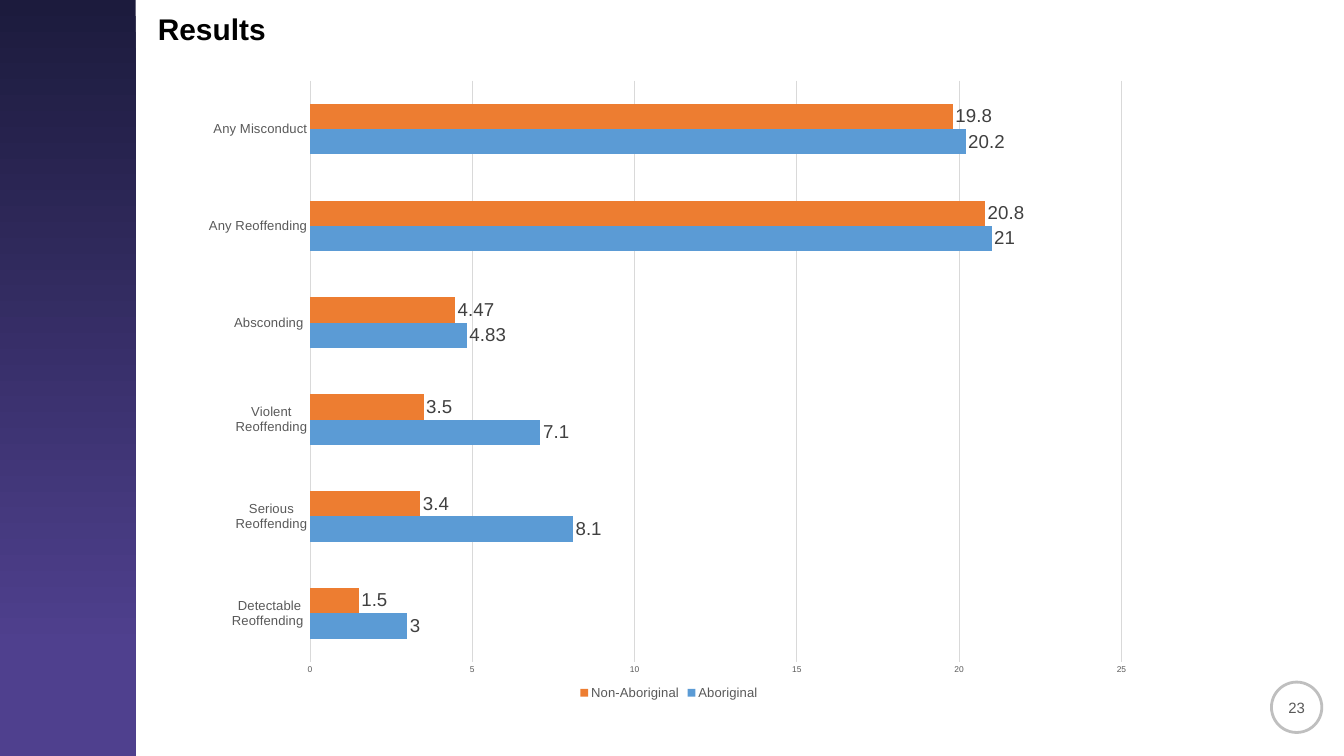
from dataclasses import dataclass

import pptx
import pptx.chart.data
import pptx.dml.color
import pptx.enum.chart
import pptx.enum.shapes
import pptx.enum.text
import pptx.oxml
import pptx.oxml.ns
import pptx.util

Inches = pptx.util.Inches
Pt = pptx.util.Pt


@dataclass(frozen=True)
class Theme:
    font: str = "Arial"
    white: str = "FFFFFF"
    title: str = "000000"
    muted: str = "595959"
    label: str = "404040"
    grid: str = "D9D9D9"
    ring: str = "BFBFBF"
    band_top: str = "1C1B3D"
    band_bottom: str = "4F408E"
    title_size: int = 32
    label_size: int = 20
    number_size: int = 16
    category_size: int = 14
    scale_size: int = 9
    chart_size: int = 10


THEME = Theme()
CATEGORIES = ["Detectable Reoffending ", "Serious Reoffending", "Violent Reoffending",
              "Absconding ", "Any Reoffending", "Any Misconduct"]
SERIES = [
    ("Aboriginal", "5B9BD5", [3, 8.1, 7.1, 4.83, 21, 20.2]),
    ("Non-Aboriginal", "ED7D31", [1.5, 3.4, 3.5, 4.47, 20.8, 19.8]),
]
PLOT_AREA = {"x": 0.112, "y": 0.016, "w": 0.877, "h": 0.919}


def rgb(value):
    return pptx.dml.color.RGBColor.from_string(value)


def style_font(font, size, color, bold=False):
    font.name = THEME.font
    font.size = Pt(size)
    font.bold = bold
    font.color.rgb = rgb(color)


def style_line(line, color, width):
    line.color.rgb = rgb(color)
    line.width = Pt(width)


def add_side_band(slide):
    band = slide.shapes.add_shape(pptx.enum.shapes.MSO_SHAPE.RECTANGLE,
                                  0, 0, Inches(2.02), Inches(11.25))
    band.shadow.inherit = False
    band.line.fill.background()
    band.fill.gradient()
    band.fill.gradient_angle = 270
    stops = [(0, THEME.band_top), (0.86, THEME.band_bottom)]
    for stop, (position, color) in zip(band.fill.gradient_stops, stops):
        stop.position = position
        stop.color.rgb = rgb(color)


def add_text(slide, text, left, top, width, height, size, color, bold=False):
    box = slide.shapes.add_textbox(Inches(left), Inches(top), Inches(width), Inches(height))
    frame = box.text_frame
    frame.word_wrap = True
    frame.text = text
    paragraph = frame.paragraphs[0]
    style_font(paragraph.runs[0].font, size, color, bold)
    return frame


def add_page_number(slide, number):
    left, top, diameter = 18.92, 10.15, 0.75
    ring = slide.shapes.add_shape(pptx.enum.shapes.MSO_SHAPE.OVAL, Inches(left), Inches(top),
                                  Inches(diameter), Inches(diameter))
    ring.shadow.inherit = False
    ring.fill.solid()
    ring.fill.fore_color.rgb = rgb(THEME.white)
    style_line(ring.line, THEME.ring, 3)
    frame = add_text(slide, number, left, top, diameter, diameter,
                     THEME.number_size, THEME.muted)
    frame.vertical_anchor = pptx.enum.text.MSO_ANCHOR.MIDDLE
    frame.paragraphs[0].alignment = pptx.enum.text.PP_ALIGN.CENTER


def place_plot_area(chart):
    """Fix the inner plot area as fractions of the chart frame."""
    plot_area = chart._chartSpace.chart.plotArea
    for layout in plot_area.findall(pptx.oxml.ns.qn("c:layout")):
        plot_area.remove(layout)
    modes = "".join(f'<c:{axis}Mode val="edge"/>' for axis in "xy")
    sizes = "".join(f'<c:{key} val="{value}"/>' for key, value in PLOT_AREA.items())
    plot_area.insert(0, pptx.oxml.parse_xml(
        f'<c:layout {pptx.oxml.ns.nsdecls("c")}><c:manualLayout>'
        f'<c:layoutTarget val="inner"/>{modes}{sizes}</c:manualLayout></c:layout>'))


def style_axes(chart):
    categories, values = chart.category_axis, chart.value_axis
    for axis, size in ((categories, THEME.category_size), (values, THEME.scale_size)):
        axis.major_tick_mark = pptx.enum.chart.XL_TICK_MARK.NONE
        axis.minor_tick_mark = pptx.enum.chart.XL_TICK_MARK.NONE
        style_font(axis.tick_labels.font, size, THEME.muted)
    style_line(categories.format.line, THEME.grid, 0.75)
    values.format.line.fill.background()
    values.has_major_gridlines = True
    style_line(values.major_gridlines.format.line, THEME.grid, 0.75)
    values.minimum_scale, values.maximum_scale, values.major_unit = 0, 25, 5


def style_series(series, color):
    series.format.fill.solid()
    series.format.fill.fore_color.rgb = rgb(color)
    series.invert_if_negative = False
    labels = series.data_labels
    labels.show_value = True
    labels.position = pptx.enum.chart.XL_LABEL_POSITION.OUTSIDE_END
    style_font(labels.font, THEME.label_size, THEME.label)


def add_results_chart(slide):
    data = pptx.chart.data.CategoryChartData()
    data.categories = CATEGORIES
    for name, _, values in SERIES:
        data.add_series(name, values)
    chart = slide.shapes.add_chart(pptx.enum.chart.XL_CHART_TYPE.BAR_CLUSTERED, Inches(3.07),
                                   Inches(1.05), Inches(13.77), Inches(9.41), data).chart
    style_font(chart.font, THEME.chart_size, THEME.title)
    chart.has_title = False
    chart.has_legend = True
    chart.legend.position = pptx.enum.chart.XL_LEGEND_POSITION.BOTTOM
    chart.legend.include_in_layout = False
    style_font(chart.legend.font, THEME.category_size, THEME.muted)
    plot = chart.plots[0]
    plot.vary_by_categories = False
    plot.gap_width = 182
    plot.overlap = 0
    for series, (_, color, _) in zip(plot.series, SERIES):
        style_series(series, color)
    style_axes(chart)
    place_plot_area(chart)


def main():
    presentation = pptx.Presentation()
    presentation.slide_width = Inches(20)
    presentation.slide_height = Inches(11.25)
    slide = presentation.slides.add_slide(presentation.slide_layouts[6])
    add_side_band(slide)
    add_page_number(slide, "23")
    title = add_text(slide, "Results", 2.25, 0.05, 6.94, 1,
                     THEME.title_size, THEME.title, bold=True)
    title.paragraphs[0].line_spacing = 1.1
    add_results_chart(slide)
    presentation.save("out.pptx")


if __name__ == "__main__":
    main()
